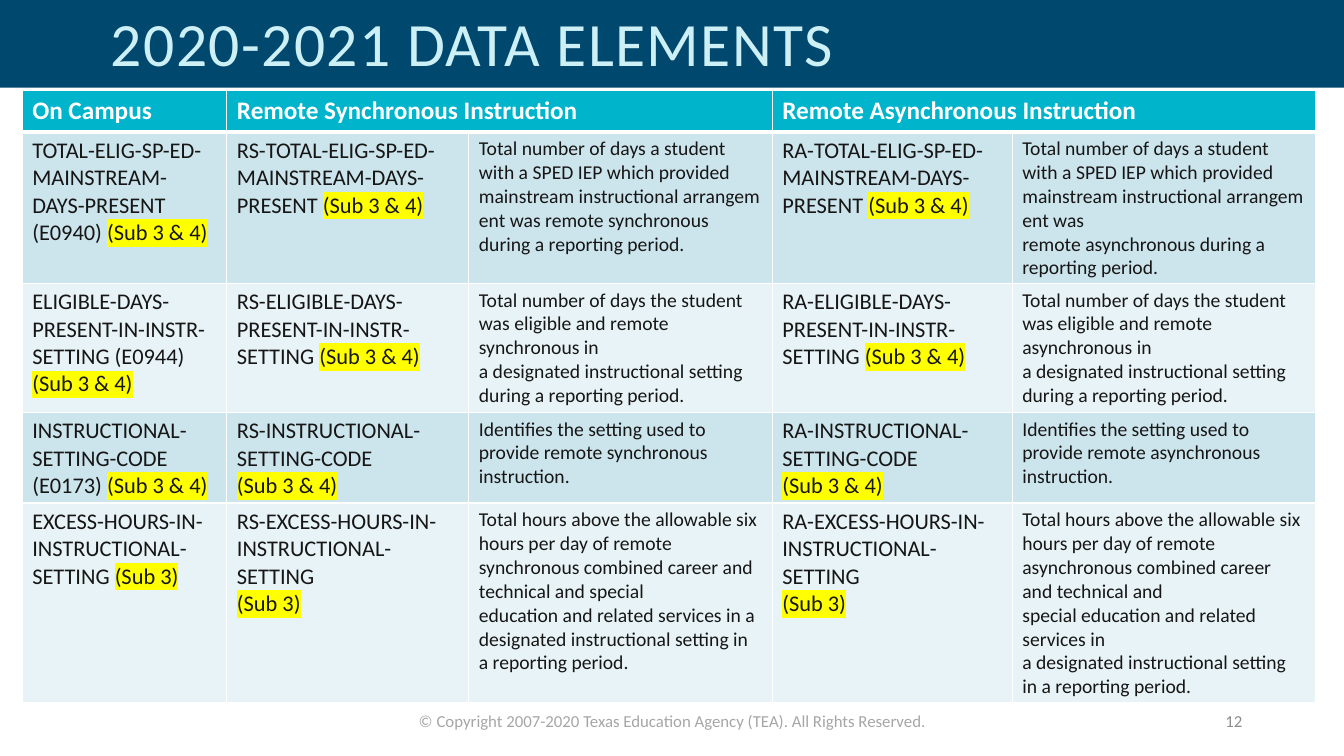
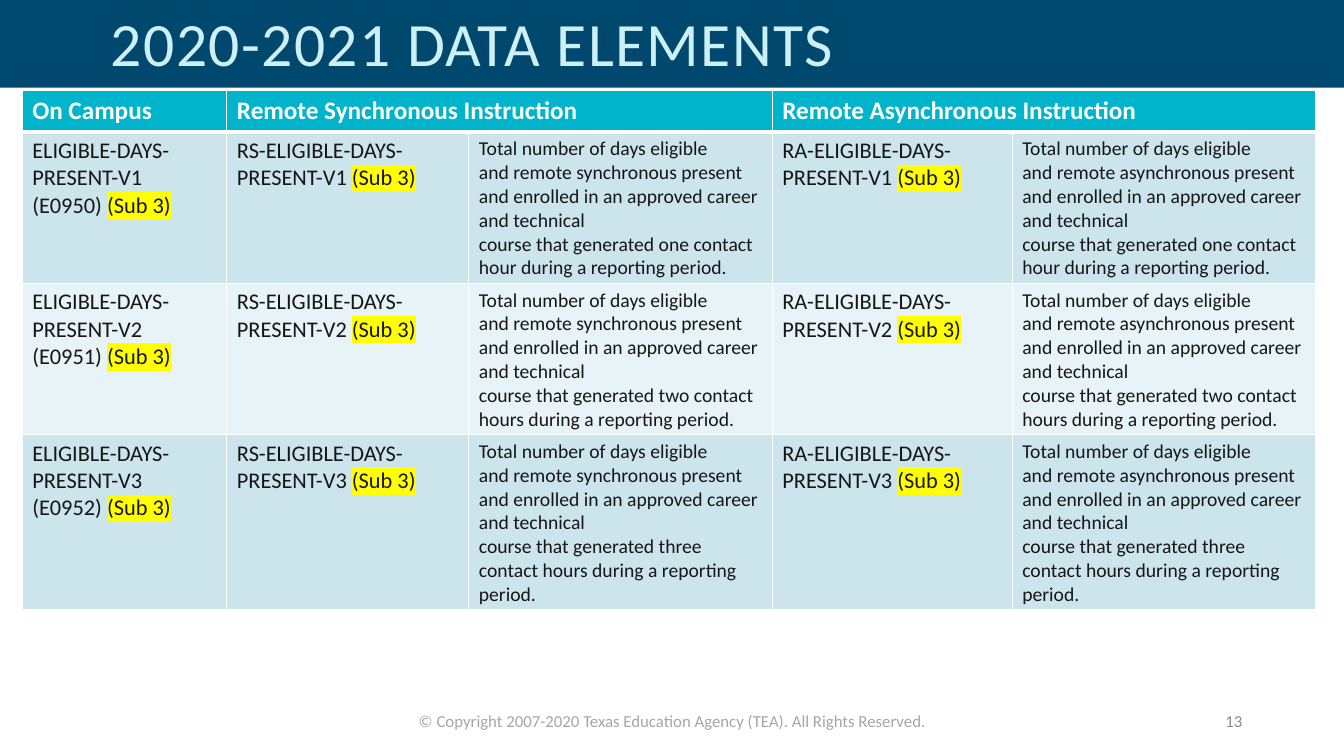
"""Build two table slides comparing on-campus and remote data elements."""
from dataclasses import dataclass

from lxml.etree import SubElement
from pptx import Presentation
from pptx.dml.color import RGBColor
from pptx.enum.shapes import MSO_SHAPE as Shape
from pptx.enum.text import MSO_ANCHOR as Anchor, MSO_AUTO_SIZE as AutoSize, PP_ALIGN as Align
from pptx.oxml.ns import qn
from pptx.util import Inches, Pt

FONT = "Calibri"
NAVY, PALE_CYAN, TEAL = "00486E", "CCF0F5", "00B5CB"
BANDS = ("CCE5EC", "E7F3F6")
WHITE, INK, YELLOW = "FFFFFF", "171616", "FFFF00"
COPYRIGHT_GRAY, NUMBER_GRAY = "A6A6A6", "8C8C8C"

TITLE = "2020-2021 DATA ELEMENTS"
COPYRIGHT = "© Copyright 2007-2020 Texas Education Agency (TEA). All Rights Reserved."
HEADINGS = {0: "On Campus", 1: "Remote Synchronous Instruction", 3: "Remote Asynchronous Instruction"}
COLUMN_WIDTHS = (2.03, 2.4, 3.01, 2.38, 3.01)
HEADER_HEIGHT = 0.41
MODES = ("synchronous", "asynchronous")
FIRST_NUMBER = 12
HARD_SPACE_MARK = "~"


@dataclass(frozen=True)
class Box:
    """Position and size in inches."""
    left: float
    top: float
    width: float
    height: float

    def lengths(self) -> tuple:
        """Return the four values as slide lengths."""
        return tuple(Inches(v) for v in (self.left, self.top, self.width, self.height))


@dataclass(frozen=True)
class DataElement:
    """One table row; a tilde marks a non-breaking space."""
    campus: str
    remote: str
    submission: str
    descriptions: tuple[str, str]
    height: float


BAND_BOX = Box(0, 0, 13.33, 0.87)
TITLE_BOX = Box(1, 0.03, 10.67, 0.87)
COPYRIGHT_BOX = Box(4.05, 7, 5.24, 0.3)
NUMBER_BOX = Box(9.42, 6.95, 3, 0.4)
TABLE_LEFT, TABLE_TOP = 0.22, 0.9

SETTING_ELEMENTS = [
    DataElement(
        "TOTAL-ELIG-SP-ED-MAINSTREAM-DAYS-PRESENT (E0940)~",
        "TOTAL-ELIG-SP-ED-MAINSTREAM-DAYS-PRESENT~",
        "(Sub 3 & 4)",
        ("Total number of days a student with a~SPED~IEP which provided mainstream~instructional~arrangement "
         "was remote~synchronous during~a reporting period.",
         "Total number of days a student with a~SPED~IEP which provided mainstream~instructional~arrangement "
         "was remote~asynchronous~during a reporting period."),
        1.5),
    DataElement(
        "ELIGIBLE-DAYS-PRESENT-IN-INSTR-SETTING (E0944)",
        "ELIGIBLE-DAYS-PRESENT-IN-INSTR-SETTING~",
        "(Sub 3 & 4)",
        ("Total number of days the student was~eligible~and remote synchronous in a~designated~instructional "
         "setting during a~reporting~period.",
         "Total number of days the student was~eligible~and remote asynchronous in a~designated~instructional "
         "setting during a~reporting period."),
        1.28),
    DataElement(
        "INSTRUCTIONAL-SETTING-CODE (E0173)~",
        "INSTRUCTIONAL-SETTING-CODE\n",
        "(Sub 3 & 4)",
        ("Identifies the setting used to provide~remote~synchronous instruction.",
         "Identifies the setting used to provide~remote~asynchronous instruction."),
        0.9),
    DataElement(
        "EXCESS-HOURS-IN-INSTRUCTIONAL-SETTING~",
        "EXCESS-HOURS-IN-INSTRUCTIONAL-SETTING\n",
        "(Sub 3)",
        ("Total hours above the allowable six hours~per~day of remote synchronous combined~career~and technical "
         "and special education~and~related services in a designated~instructional~setting in a reporting period.",
         "Total hours above the allowable six hours~per~day of remote asynchronous~combined~career and technical "
         "and special~education~and related services in a~designated~instructional setting in a reporting~period."),
        1.98),
]


def career_element(version: int, contact: str, height: float) -> DataElement:
    """Describe one career and technical course version."""
    name = f"ELIGIBLE-DAYS-PRESENT-V{version}"
    descriptions = tuple(
        f"Total number of days eligible and~remote~{mode} present and enrolled in~an~approved career and "
        f"technical course~that~generated {contact} during~a~reporting period." for mode in MODES)
    return DataElement(f"{name} (E{949 + version:04})~", f"{name}~", "(Sub 3)", descriptions, height)


CAREER_ELEMENTS = [
    career_element(1, "one contact hour", 1.5),
    career_element(2, "two contact hours", 1.5),
    career_element(3, "three contact hours", 1.73),
]


def color(value: str) -> RGBColor:
    """Turn a hex string into a colour."""
    return RGBColor.from_string(value)


def style_run(run, size: float, value: str, bold: bool = False) -> None:
    """Set the font of a run."""
    run.font.name = FONT
    run.font.size = Pt(size)
    run.font.bold = bold
    run.font.color.rgb = color(value)


def highlight(run) -> None:
    """Mark a run in yellow."""
    properties = run._r.get_or_add_rPr()
    mark = SubElement(properties, qn("a:highlight"))
    SubElement(mark, qn("a:srgbClr"), val=YELLOW)
    properties.find(qn("a:solidFill")).addnext(mark)


def add_label(slide, box: Box, text: str, value: str, align: Align, anchor: Anchor):
    """Add a small footer text."""
    label = slide.shapes.add_textbox(*box.lengths())
    frame = label.text_frame
    frame.word_wrap = True
    frame.vertical_anchor = anchor
    frame.text = text
    frame.paragraphs[0].alignment = align
    style_run(frame.paragraphs[0].runs[0], 12, value)
    return label


def share_on_layout(slide) -> None:
    """Place the band, copyright line and title position on the layout."""
    band = slide.shapes.add_shape(Shape.RECTANGLE, *BAND_BOX.lengths())
    band.shadow.inherit = False
    band.fill.solid()
    band.fill.fore_color.rgb = color(NAVY)
    band.line.fill.background()
    notice = add_label(slide, COPYRIGHT_BOX, COPYRIGHT, COPYRIGHT_GRAY, Align.CENTER, Anchor.TOP)
    layout = slide.slide_layout
    for shape in (notice, band):
        layout.shapes.element.insert(2, shape.element)
    title = layout.placeholders[0]
    title.left, title.top, title.width, title.height = TITLE_BOX.lengths()


def fill_title(slide) -> None:
    """Write and format the slide title."""
    frame = slide.shapes.title.text_frame
    frame.text = TITLE
    frame.auto_size = AutoSize.NONE
    frame.vertical_anchor = Anchor.MIDDLE
    paragraph = frame.paragraphs[0]
    paragraph.alignment = Align.LEFT
    paragraph.line_spacing = 0.9
    style_run(paragraph.runs[0], 44, PALE_CYAN)
    paragraph.runs[0]._r.get_or_add_rPr().set("spc", "100")


def format_cell(cell, fill: str, top: float = 1, bottom: float = 1) -> None:
    """Give a cell white borders and a solid fill."""
    properties = cell._tc.get_or_add_tcPr()
    for side, width in (("L", 1), ("R", 1), ("T", top), ("B", bottom)):
        line = SubElement(properties, qn(f"a:ln{side}"), w=str(Pt(width)))
        SubElement(SubElement(line, qn("a:solidFill")), qn("a:srgbClr"), val=WHITE)
    cell.fill.solid()
    cell.fill.fore_color.rgb = color(fill)


def write_cell(cell, text: str, size: float, value: str = INK, submission: str = "", bold: bool = False) -> None:
    """Write a cell, followed by an optional highlighted submission."""
    frame = cell.text_frame
    frame.text = text.replace(HARD_SPACE_MARK, chr(160))
    style_run(frame.paragraphs[0].runs[0], size, value, bold)
    if submission:
        run = frame.paragraphs[-1].add_run()
        run.text = submission
        style_run(run, size, value)
        highlight(run)


def add_elements_table(slide, elements: list[DataElement]) -> None:
    """Draw the table of data elements."""
    heights = [HEADER_HEIGHT] + [element.height for element in elements]
    box = Box(TABLE_LEFT, TABLE_TOP, sum(COLUMN_WIDTHS), sum(heights))
    table = slide.shapes.add_table(len(heights), len(COLUMN_WIDTHS), *box.lengths()).table
    for column, width in zip(table.columns, COLUMN_WIDTHS):
        column.width = Inches(width)
    for index, height in enumerate(heights):
        table.rows[index].height = Inches(height)
        for cell in table.rows[index].cells:
            if index == 0:
                format_cell(cell, TEAL, bottom=3)
            else:
                format_cell(cell, BANDS[(index - 1) % 2], top=3 if index == 1 else 1)
    for column, heading in HEADINGS.items():
        cell = table.cell(0, column)
        if column:
            cell.merge(table.cell(0, column + 1))
        write_cell(cell, heading, 18, WHITE, bold=True)
    for row, element in enumerate(elements, start=1):
        write_cell(table.cell(row, 0), element.campus, 16, submission=element.submission)
        for column, prefix, description in zip((1, 3), ("RS", "RA"), element.descriptions):
            write_cell(table.cell(row, column), f"{prefix}-{element.remote}", 16, submission=element.submission)
            write_cell(table.cell(row, column + 1), description, 14)


def main() -> None:
    """Build and save the presentation."""
    presentation = Presentation()
    presentation.slide_width, presentation.slide_height = Inches(13.33), Inches(7.5)
    layout = presentation.slide_layouts[5]
    for index, elements in enumerate((SETTING_ELEMENTS, CAREER_ELEMENTS)):
        slide = presentation.slides.add_slide(layout)
        if index == 0:
            share_on_layout(slide)
        add_label(slide, NUMBER_BOX, str(FIRST_NUMBER + index), NUMBER_GRAY, Align.RIGHT, Anchor.MIDDLE)
        fill_title(slide)
        add_elements_table(slide, elements)
    presentation.save("out.pptx")


if __name__ == "__main__":
    main()
